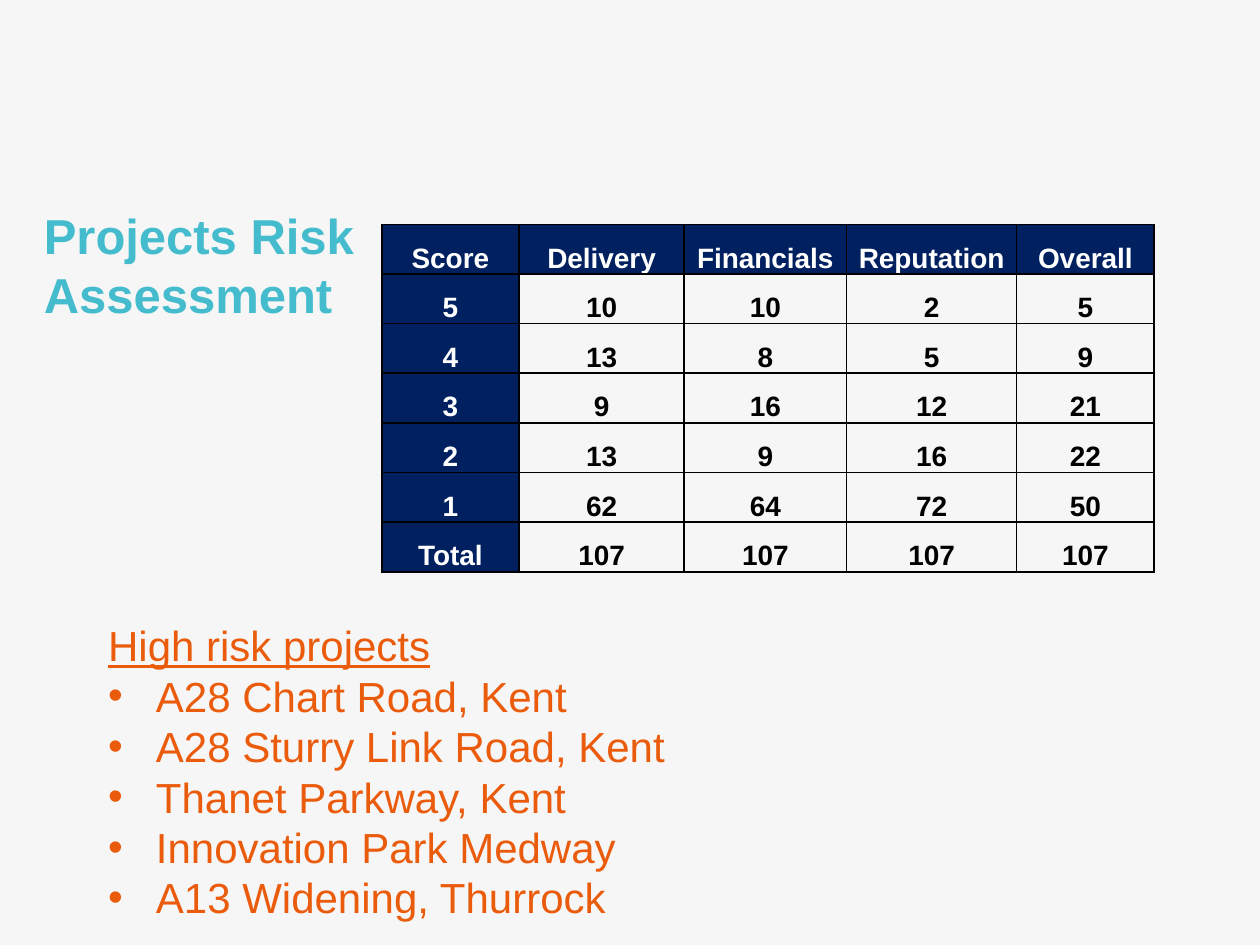
import pptx
import pptx.dml.color
import pptx.enum.text
import pptx.oxml.ns
import pptx.util
from lxml import etree
from pptx.util import Inches

TITLE = "Projects Risk Assessment"
RISK_SCORES = [
    ("Score", "Delivery", "Financials", "Reputation", "Overall"),
    ("5", "10", "10", "2", "5"),
    ("4", "13", "8", "5", "9"),
    ("3", "9", "16", "12", "21"),
    ("2", "13", "9", "16", "22"),
    ("1", "62", "64", "72", "50"),
    ("Total", "107", "107", "107", "107"),
]
COLUMN_WIDTHS = [1.09, 1.31, 1.29, 1.35, 1.09]
HIGH_RISK_HEADING = "High risk projects"
HIGH_RISK_PROJECTS = [
    "A28 Chart Road, Kent",
    "A28 Sturry Link Road, Kent",
    "Thanet Parkway, Kent",
    "Innovation Park Medway",
    "A13 Widening, Thurrock",
]
THEME = {
    "font": "Arial",
    "background": "F6F6F6",
    "title": "44BCCD",
    "header_fill": "002060",
    "header_text": "FFFFFF",
    "body_text": "000000",
    "border": "000000",
    "list": "EA5B0C",
    "title_size": 28,
    "table_size": 16,
    "list_size": 24,
}


def color(name):
    return pptx.dml.color.RGBColor.from_string(THEME[name])


def style_font(paragraph, size_name, color_name, bold=False, underline=False):
    font = paragraph.font
    font.name = THEME["font"]
    font.size = pptx.util.Pt(THEME[size_name])
    font.color.rgb = color(color_name)
    font.bold = bold
    font.underline = underline


def add_text_frame(slide, left, top, width, height):
    shape = slide.shapes.add_textbox(
        Inches(left), Inches(top), Inches(width), Inches(height)
    )
    text_frame = shape.text_frame
    text_frame.word_wrap = True
    text_frame.auto_size = pptx.enum.text.MSO_AUTO_SIZE.SHAPE_TO_FIT_TEXT
    return text_frame


def add_bullet(paragraph, indent):
    properties = paragraph._p.get_or_add_pPr()
    properties.set("marL", str(Inches(indent)))
    properties.set("indent", str(-Inches(indent)))
    bullet_font = etree.SubElement(properties, pptx.oxml.ns.qn("a:buFont"))
    bullet_font.set("typeface", THEME["font"])
    etree.SubElement(properties, pptx.oxml.ns.qn("a:buChar")).set("char", "•")


def add_borders(cell):
    properties = cell._tc.get_or_add_tcPr()
    for side in ("a:lnL", "a:lnR", "a:lnT", "a:lnB"):
        line = etree.SubElement(properties, pptx.oxml.ns.qn(side))
        line.set("w", str(pptx.util.Pt(1)))
        fill = etree.SubElement(line, pptx.oxml.ns.qn("a:solidFill"))
        etree.SubElement(fill, pptx.oxml.ns.qn("a:srgbClr")).set("val", THEME["border"])


def fill_cell(cell, text, is_header):
    add_borders(cell)
    if is_header:
        cell.fill.solid()
        cell.fill.fore_color.rgb = color("header_fill")
    else:
        cell.fill.background()
    cell.margin_left = cell.margin_right = Inches(0.07)
    cell.margin_top = cell.margin_bottom = 0
    cell.vertical_anchor = pptx.enum.text.MSO_ANCHOR.BOTTOM
    cell.text = text
    paragraph = cell.text_frame.paragraphs[0]
    paragraph.alignment = pptx.enum.text.PP_ALIGN.CENTER
    paragraph.line_spacing = 1.15
    style_font(
        paragraph, "table_size", "header_text" if is_header else "body_text", bold=True
    )


def add_title(slide):
    paragraph = add_text_frame(slide, 0.25, 1.58, 3.23, 1.04).paragraphs[0]
    paragraph.text = TITLE
    style_font(paragraph, "title_size", "title", bold=True)


def add_risk_table(slide):
    table = slide.shapes.add_table(
        len(RISK_SCORES),
        len(COLUMN_WIDTHS),
        Inches(3.03),
        Inches(1.78),
        Inches(sum(COLUMN_WIDTHS)),
        Inches(2.76),
    ).table
    table.horz_banding = False
    for column, width in zip(table.columns, COLUMN_WIDTHS):
        column.width = Inches(width)
    for row_index, row in enumerate(RISK_SCORES):
        for column_index, text in enumerate(row):
            is_header = row_index == 0 or column_index == 0
            fill_cell(table.cell(row_index, column_index), text, is_header)


def add_high_risk_list(slide):
    text_frame = add_text_frame(slide, 0.76, 4.87, 6.77, 2.52)
    heading = text_frame.paragraphs[0]
    heading.text = HIGH_RISK_HEADING
    style_font(heading, "list_size", "list", underline=True)
    for project in HIGH_RISK_PROJECTS:
        paragraph = text_frame.add_paragraph()
        paragraph.text = project
        add_bullet(paragraph, 0.38)
        style_font(paragraph, "list_size", "list")


def main():
    presentation = pptx.Presentation()
    presentation.slide_width = Inches(10)
    presentation.slide_height = Inches(7.5)
    slide = presentation.slides.add_slide(presentation.slide_layouts[6])
    slide.background.fill.solid()
    slide.background.fill.fore_color.rgb = color("background")
    add_title(slide)
    add_risk_table(slide)
    add_high_risk_list(slide)
    presentation.save("out.pptx")


if __name__ == "__main__":
    main()
